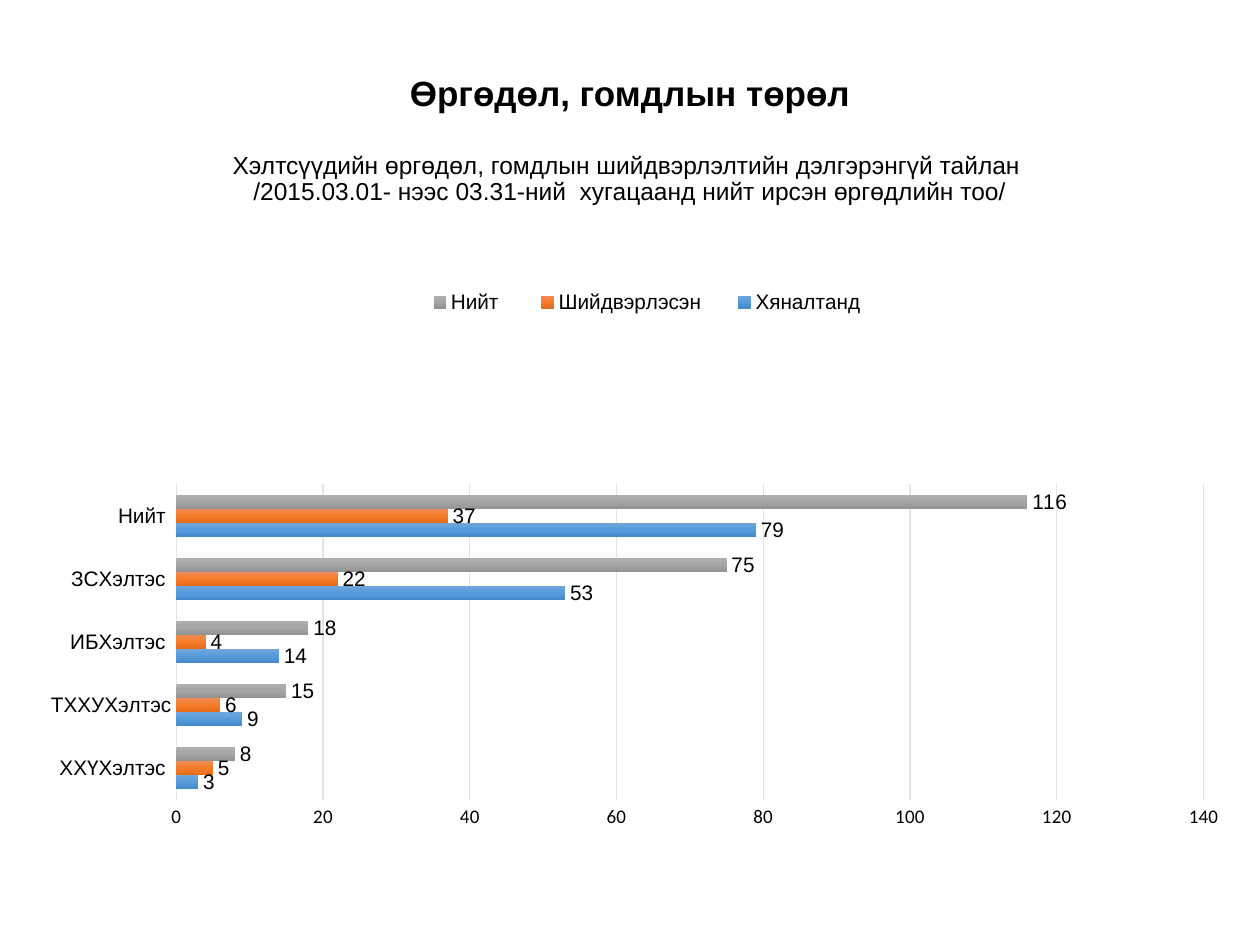
from dataclasses import dataclass

import pptx
import pptx.chart.data
import pptx.dml.color
import pptx.enum.chart
import pptx.enum.text
import pptx.oxml
import pptx.oxml.ns
import pptx.util


@dataclass(frozen=True)
class Theme:
    ink: str = "000000"
    grid: str = "E0E5EB"
    text_font: str = "Arial"
    scale_font: str = "Calibri"
    title_size: int = 20
    subtitle_size: int = 14
    label_size: int = 12
    scale_size: int = 11
    base_size: int = 10


@dataclass(frozen=True)
class Series:
    name: str
    values: tuple[int, ...]
    shades: tuple[str, str, str]  # top, middle and bottom of each bar


@dataclass(frozen=True)
class Area:
    """A box given as shares of its container."""
    x: float
    y: float
    w: float
    h: float


THEME = Theme()
WIDTH, HEIGHT = pptx.util.Inches(10), pptx.util.Inches(7.5)
HEADING_AREA = Area(0.069, 0.053, 0.862, 0.193)
CHART_AREA = Area(0.035, 0.28, 0.932, 0.661)
PLOT_AREA = Area(0.121, 0.352, 0.886, 0.505)
LEGEND_AREA = Area(0.31, 0.03, 0.42, 0.06)

TITLE = "Өргөдөл, гомдлын төрөл"
SUBTITLE = ("Хэлтсүүдийн өргөдөл, гомдлын шийдвэрлэлтийн дэлгэрэнгүй тайлан \v"
            "/2015.03.01- нээс 03.31-ний  хугацаанд нийт ирсэн өргөдлийн тоо/")
DEPARTMENTS = ("ХХҮХэлтэс ", "ТХХУХэлтэс", "ИБХэлтэс ", "ЗСХэлтэс ", "Нийт ")
SERIES = (
    Series("Хяналтанд", (3, 9, 14, 53, 79), ("71A6DB", "559BDB", "448ACA")),
    Series("Шийдвэрлэсэн", (5, 6, 4, 22, 37), ("F18C57", "F67B28", "E56C19")),
    Series("Нийт ", (8, 15, 18, 75, 116), ("AFAFAF", "A5A5A5", "939393")),
)


def place(area: Area) -> tuple[int, int, int, int]:
    return (int(area.x * WIDTH), int(area.y * HEIGHT),
            int(area.w * WIDTH), int(area.h * HEIGHT))


def color(value: str) -> pptx.dml.color.RGBColor:
    return pptx.dml.color.RGBColor.from_string(value)


def set_font(font, size: int, name: str = THEME.text_font, bold: bool = False) -> None:
    font.size = pptx.util.Pt(size)
    font.name = name
    font.bold = bold
    font.color.rgb = color(THEME.ink)


def set_grid_line(line) -> None:
    line.color.rgb = color(THEME.grid)
    line.width = pptx.util.Pt(0.75)


def manual_layout(area: Area, inner: bool = False):
    target = '<c:layoutTarget val="inner"/>' if inner else ""
    return pptx.oxml.parse_xml(
        f'<c:layout {pptx.oxml.ns.nsdecls("c")}><c:manualLayout>{target}'
        '<c:xMode val="edge"/><c:yMode val="edge"/>'
        f'<c:x val="{area.x}"/><c:y val="{area.y}"/>'
        f'<c:w val="{area.w}"/><c:h val="{area.h}"/></c:manualLayout></c:layout>')


def set_bar_gradient(bars, shades: tuple[str, str, str]) -> None:
    stops = "".join(f'<a:gs pos="{i * 50000}"><a:srgbClr val="{shade}"/></a:gs>'
                    for i, shade in enumerate(shades))
    gradient = pptx.oxml.parse_xml(
        f'<a:gradFill {pptx.oxml.ns.nsdecls("a")} rotWithShape="1"><a:gsLst>{stops}'
        '</a:gsLst><a:lin ang="5400000" scaled="0"/></a:gradFill>')
    bars.format.line.fill.background()
    bars.format.fill.background()
    no_fill = bars.format.fill._xPr.find(pptx.oxml.ns.qn("a:noFill"))
    no_fill.getparent().replace(no_fill, gradient)


def add_heading(slide) -> None:
    frame = slide.shapes.add_textbox(*place(HEADING_AREA)).text_frame
    frame.word_wrap = True
    frame.vertical_anchor = pptx.enum.text.MSO_ANCHOR.MIDDLE
    title, subtitle = frame.paragraphs[0], frame.add_paragraph()
    title.text, subtitle.text = TITLE, SUBTITLE
    set_font(title.font, THEME.title_size, bold=True)
    set_font(subtitle.font, THEME.subtitle_size)
    subtitle.space_before = pptx.util.Pt(22)
    for paragraph in (title, subtitle):
        paragraph.alignment = pptx.enum.text.PP_ALIGN.CENTER
        paragraph.line_spacing = 0.9


def style_axes(chart) -> None:
    departments, scale = chart.category_axis, chart.value_axis
    for axis in (departments, scale):
        axis.major_tick_mark = pptx.enum.chart.XL_TICK_MARK.NONE
        axis.minor_tick_mark = pptx.enum.chart.XL_TICK_MARK.NONE
    set_font(departments.tick_labels.font, THEME.label_size)
    set_grid_line(departments.format.line)
    set_font(scale.tick_labels.font, THEME.scale_size, THEME.scale_font)
    scale.format.line.fill.background()
    scale.minimum_scale, scale.maximum_scale, scale.major_unit = 0, 140, 20
    scale.has_major_gridlines = True
    set_grid_line(scale.major_gridlines.format.line)


def add_legend(chart) -> None:
    chart.has_legend = True
    legend = chart.legend
    legend.position = pptx.enum.chart.XL_LEGEND_POSITION.BOTTOM
    legend.include_in_layout = False
    set_font(legend.font, THEME.label_size)
    position = legend._element.find(pptx.oxml.ns.qn("c:legendPos"))
    for old in legend._element.findall(pptx.oxml.ns.qn("c:layout")):
        legend._element.remove(old)
    position.addnext(manual_layout(LEGEND_AREA))


def add_complaints_chart(slide) -> None:
    data = pptx.chart.data.CategoryChartData()
    data.categories = DEPARTMENTS
    for series in SERIES:
        data.add_series(series.name, series.values)
    chart = slide.shapes.add_chart(
        pptx.enum.chart.XL_CHART_TYPE.BAR_CLUSTERED, *place(CHART_AREA), data).chart
    chart.has_title = False
    set_font(chart.font, THEME.base_size, THEME.scale_font)

    # Bars and their values
    plot = chart.plots[0]
    plot.gap_width = 150
    plot.vary_by_categories = False
    for bars, series in zip(plot.series, SERIES):
        set_bar_gradient(bars, series.shades)
        labels = bars.data_labels
        labels.show_value = True
        labels.position = pptx.enum.chart.XL_LABEL_POSITION.OUTSIDE_END
        set_font(labels.font, THEME.label_size)

    style_axes(chart)
    add_legend(chart)

    # Fixed plot position
    plot_area = chart._chartSpace.chart.plotArea
    for old in plot_area.findall(pptx.oxml.ns.qn("c:layout")):
        plot_area.remove(old)
    plot_area.insert(0, manual_layout(PLOT_AREA, inner=True))


def main() -> None:
    presentation = pptx.Presentation()
    presentation.slide_width, presentation.slide_height = WIDTH, HEIGHT
    slide = presentation.slides.add_slide(presentation.slide_layouts[6])
    add_heading(slide)
    add_complaints_chart(slide)
    presentation.save("out.pptx")


if __name__ == "__main__":
    main()
